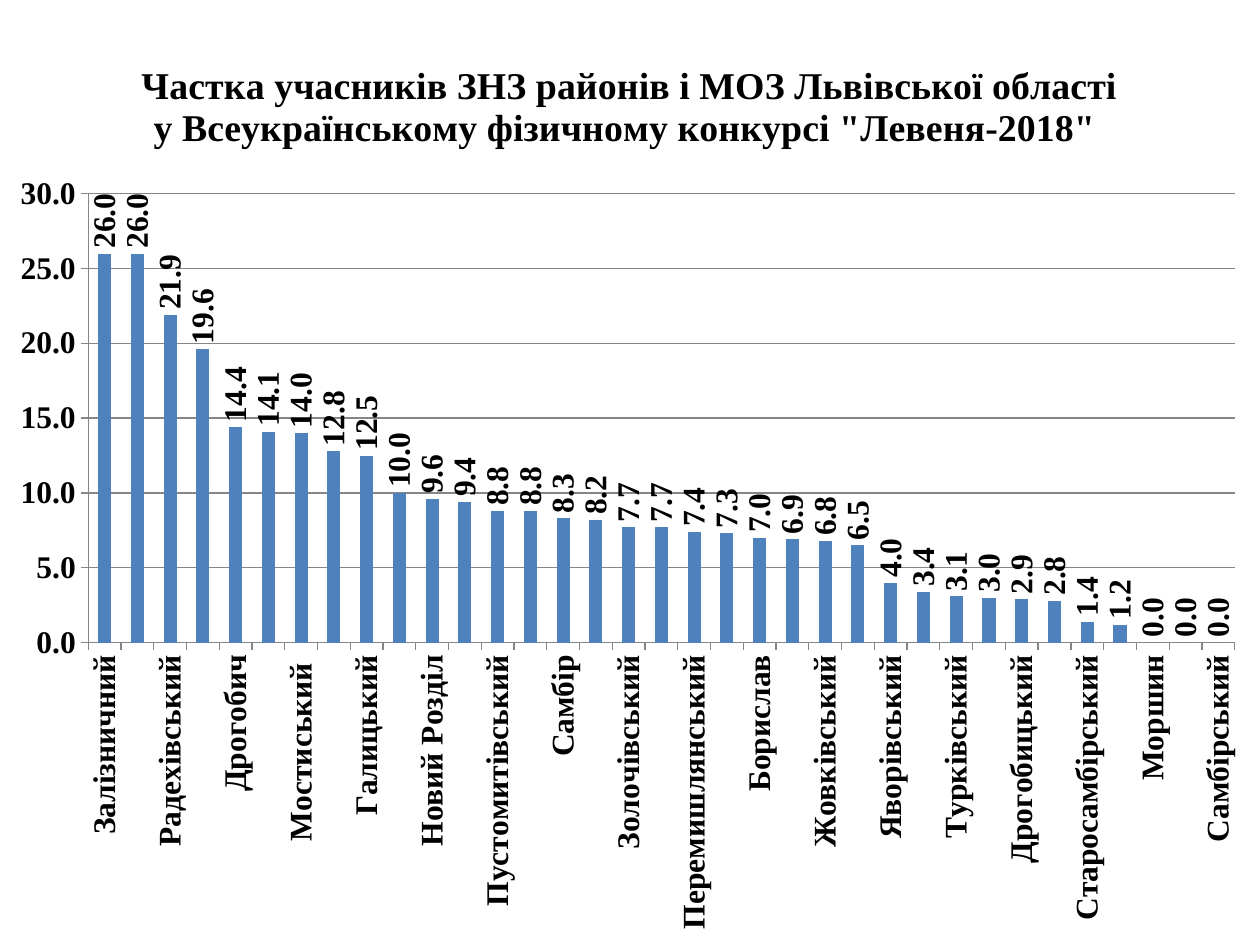
from dataclasses import dataclass

from lxml import etree
from pptx import Presentation
from pptx.chart.data import CategoryChartData
from pptx.dml.color import RGBColor
from pptx.enum.chart import XL_CHART_TYPE, XL_LABEL_POSITION, XL_TICK_MARK
from pptx.oxml.ns import qn
from pptx.util import Pt

COLUMNS = XL_CHART_TYPE.COLUMN_CLUSTERED
OUTSIDE = XL_LABEL_POSITION.OUTSIDE_END
TICK_OUT = XL_TICK_MARK.OUTSIDE
UPWARD = "-5400000"


@dataclass(frozen=True)
class Theme:
    font: str = "Times New Roman"
    text: RGBColor = RGBColor(0, 0, 0)
    bar: RGBColor = RGBColor(0x4F, 0x81, 0xBD)
    grid: RGBColor = RGBColor(0x86, 0x86, 0x86)
    title_size: float = 21.6
    label_size: float = 18
    line: float = 0.75


THEME = Theme()
TITLE = ("Частка учасників ЗНЗ районів і МОЗ Львівської області "
         "у Всеукраїнському фізичному конкурсі \"Левеня-2018\" ")
SHARES = {
    "Залізничний": 26, "Кам’янка-Бузький": 26, "Радехівський": 21.9,
    "Городоцький": 19.6, "Дрогобич": 14.4, "Миколаївський": 14.1,
    "Мостиський ": 14, "Сихівський": 12.8, "Галицький": 12.5,
    "Шевченківський": 10, "Новий Розділ": 9.6, "Райони і МОЗ": 9.4,
    "Пустомитівський": 8.8, "Франківський": 8.8, "Самбір": 8.3,
    "Трускавець": 8.2, "Золочівський": 7.7, "Буський": 7.7,
    "Перемишлянський": 7.4, "Стрий": 7.3, "Борислав": 7,
    "Личаківський": 6.9, "Жовківський": 6.8, "Бродівський": 6.5,
    "Яворівський": 4, "Сокальський": 3.4, "Турківський": 3.1,
    "Сколівський": 3, "Дрогобицький": 2.9, "Червоноград": 2.8,
    "Старосамбірський": 1.4, "Стрийський": 1.2, "Моршин": 0,
    "Жидачівський": 0, "Самбірський": 0,
}


def style_font(font, size):
    font.name = THEME.font
    font.size = Pt(size)
    font.bold = True
    font.color.rgb = THEME.text


def style_line(line):
    line.color.rgb = THEME.grid
    line.width = Pt(THEME.line)


def turn_upward(text_owner):
    """Rotate the text of an axis or a set of data labels."""
    body = text_owner.find(qn("c:txPr")).find(qn("a:bodyPr"))
    body.set("rot", UPWARD)
    body.set("vert", "horz")


def fix_plot_area(chart, x, y, w, h):
    """Place the inner plot area by fractions of the chart."""
    area = chart.element.find(qn("c:chart")).find(qn("c:plotArea"))
    layout = area.find(qn("c:layout"))
    if layout is None:
        layout = etree.Element(qn("c:layout"))
        area.insert(0, layout)
    manual = etree.SubElement(layout, qn("c:manualLayout"))
    settings = {"layoutTarget": "inner", "xMode": "edge", "yMode": "edge",
                "x": x, "y": y, "w": w, "h": h}
    for tag, value in settings.items():
        etree.SubElement(manual, qn(f"c:{tag}")).set("val", str(value))


def add_share_chart(slide, left, top, width, height):
    data = CategoryChartData(number_format="0.0")
    data.categories = list(SHARES)
    data.add_series("Series 1", list(SHARES.values()))
    chart = slide.shapes.add_chart(COLUMNS, left, top, width, height, data).chart
    chart.has_legend = False
    style_font(chart.font, THEME.label_size)

    # Title
    chart.has_title = True
    chart.chart_title.include_in_layout = False
    heading = chart.chart_title.text_frame.paragraphs[0].add_run()
    heading.text = TITLE
    style_font(heading.font, THEME.title_size)

    # Columns and their values
    plot = chart.plots[0]
    plot.gap_width = 150
    plot.vary_by_categories = False
    columns = plot.series[0]
    columns.format.fill.solid()
    columns.format.fill.fore_color.rgb = THEME.bar
    plot.has_data_labels = True
    values = plot.data_labels
    values.show_value = True
    values.number_format = "0.0"
    values.number_format_is_linked = False
    values.position = OUTSIDE
    style_font(values.font, THEME.label_size)
    turn_upward(plot._element.find(qn("c:dLbls")))

    # Axes
    districts, shares = chart.category_axis, chart.value_axis
    for axis in (districts, shares):
        axis.major_tick_mark = TICK_OUT
        style_font(axis.tick_labels.font, THEME.label_size)
        style_line(axis.format.line)
    turn_upward(districts._element)
    shares.minimum_scale, shares.maximum_scale = 0, 30
    shares.major_unit = 5
    shares.tick_labels.number_format = "0.0"
    shares.tick_labels.number_format_is_linked = False
    shares.has_major_gridlines = True
    style_line(shares.major_gridlines.format.line)

    fix_plot_area(chart, 0.07, 0.18, 0.91, 0.49)


def main():
    deck = Presentation()
    deck.slide_width, deck.slide_height = Pt(720), Pt(540)
    slide = deck.slides.add_slide(deck.slide_layouts[6])
    add_share_chart(slide, Pt(0), Pt(16.5), Pt(720), Pt(523.5))
    deck.save("out.pptx")


if __name__ == "__main__":
    main()
